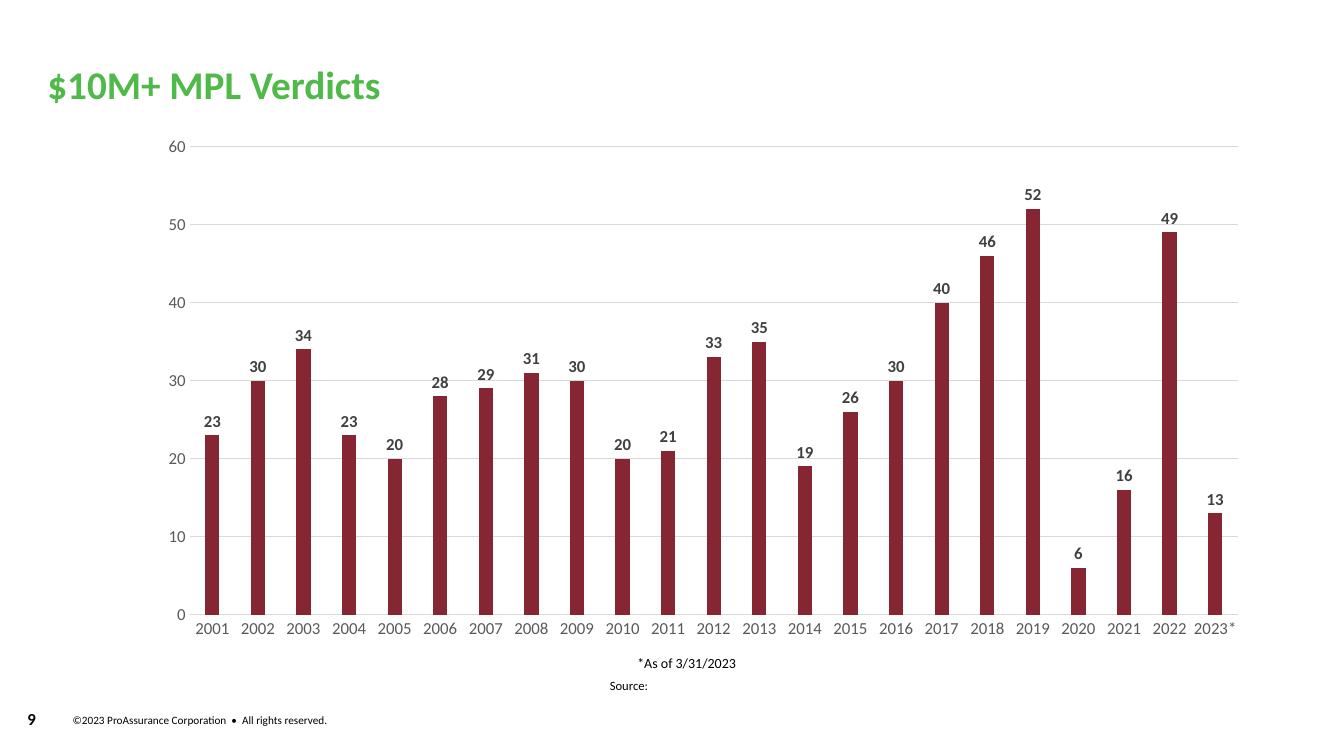
import pptx
import pptx.chart.data
import pptx.dml.color
import pptx.enum.chart
import pptx.enum.text
import pptx.util

Inches = pptx.util.Inches
ANCHOR = pptx.enum.text.MSO_ANCHOR
ALIGN = pptx.enum.text.PP_ALIGN
CHART = pptx.enum.chart

FONT = "Calibri"
COLORS = {
    "title": "4FB94A",
    "bar": "862633",
    "text": "000000",
    "axis": "595959",
    "label": "404040",
    "grid": "D9D9D9",
}
YEARS = [str(year) for year in range(2001, 2023)] + ["2023*"]
VERDICTS = [23, 30, 34, 23, 20, 28, 29, 31, 30, 20, 21, 33,
            35, 19, 26, 30, 40, 46, 52, 6, 16, 49, 13]


def rgb(name):
    return pptx.dml.color.RGBColor.from_string(COLORS[name])


def set_values(target, values):
    for name, value in values.items():
        setattr(target, name, value)


def style_font(font, size, color="text", bold=False):
    set_values(font, {"name": FONT, "size": pptx.util.Pt(size), "bold": bold})
    font.color.rgb = rgb(color)


def style_line(line):
    line.color.rgb = rgb("grid")
    line.width = pptx.util.Pt(0.75)


def add_text(slide, text, box, size, color="text", bold=False,
             margins=(0.1, 0.05), frame_format=None, paragraph_format=None):
    shape = slide.shapes.add_textbox(*map(Inches, box))
    frame = shape.text_frame
    side, end = map(Inches, margins)
    set_values(frame, {
        "word_wrap": True,
        "margin_left": side,
        "margin_right": side,
        "margin_top": end,
        "margin_bottom": end,
        **(frame_format or {}),
    })
    paragraph = frame.paragraphs[0]
    set_values(paragraph, paragraph_format or {})
    run = paragraph.add_run()
    run.text = text
    style_font(run.font, size, color, bold)


def style_axis(axis):
    set_values(axis, {
        "major_tick_mark": CHART.XL_TICK_MARK.NONE,
        "minor_tick_mark": CHART.XL_TICK_MARK.NONE,
    })
    style_font(axis.tick_labels.font, 12, "axis")


def add_verdict_chart(slide, box):
    data = pptx.chart.data.CategoryChartData()
    data.categories = YEARS
    data.add_series("Series 1", VERDICTS)
    chart = slide.shapes.add_chart(
        CHART.XL_CHART_TYPE.COLUMN_CLUSTERED, *map(Inches, box), data).chart
    set_values(chart, {"has_legend": False, "has_title": False})
    style_font(chart.font, 10)

    style_axis(chart.category_axis)
    style_line(chart.category_axis.format.line)
    value_axis = chart.value_axis
    style_axis(value_axis)
    set_values(value_axis, {"minimum_scale": 0, "maximum_scale": 60,
                            "major_unit": 10, "has_major_gridlines": True})
    value_axis.format.line.fill.background()
    style_line(value_axis.major_gridlines.format.line)

    plot = chart.plots[0]
    set_values(plot, {"gap_width": 219, "overlap": -27,
                      "vary_by_categories": False})
    series = plot.series[0]
    series.format.fill.solid()
    series.format.fill.fore_color.rgb = rgb("bar")
    labels = series.data_labels
    set_values(labels, {"show_value": True,
                        "position": CHART.XL_LABEL_POSITION.OUTSIDE_END})
    style_font(labels.font, 12, "label", True)


def main():
    presentation = pptx.Presentation()
    set_values(presentation, {"slide_width": Inches(13.33),
                              "slide_height": Inches(7.5)})
    slide = presentation.slides.add_slide(presentation.slide_layouts[6])
    middle = {"vertical_anchor": ANCHOR.MIDDLE}
    centered = {"alignment": ALIGN.CENTER}

    add_text(slide, "©2023 ProAssurance Corporation  •  All rights reserved.",
             (0.72, 7.08, 4.17, 0.13), 8, margins=(0, 0), frame_format=middle)
    add_text(slide, "9", (-0.09, 6.98, 0.81, 0.3), 12, bold=True,
             frame_format=middle, paragraph_format=centered)
    add_text(slide, "*As of 3/31/2023", (5.6, 6.44, 2.42, 0.33), 10,
             margins=(0, 0.05), paragraph_format=centered)
    add_text(slide, "$10M+ MPL Verdicts", (0.47, 0.48, 12.03, 0.77), 28,
             "title", True, margins=(0, 0.1), frame_format=middle,
             paragraph_format={"line_spacing": 0.9})
    add_text(slide, "Source:", (5.95, 6.68, 0.63, 0.25), 9,
             frame_format={"word_wrap": False})
    add_verdict_chart(slide, (1.45, 1.25, 11.05, 5.19))
    presentation.save("out.pptx")


if __name__ == "__main__":
    main()
